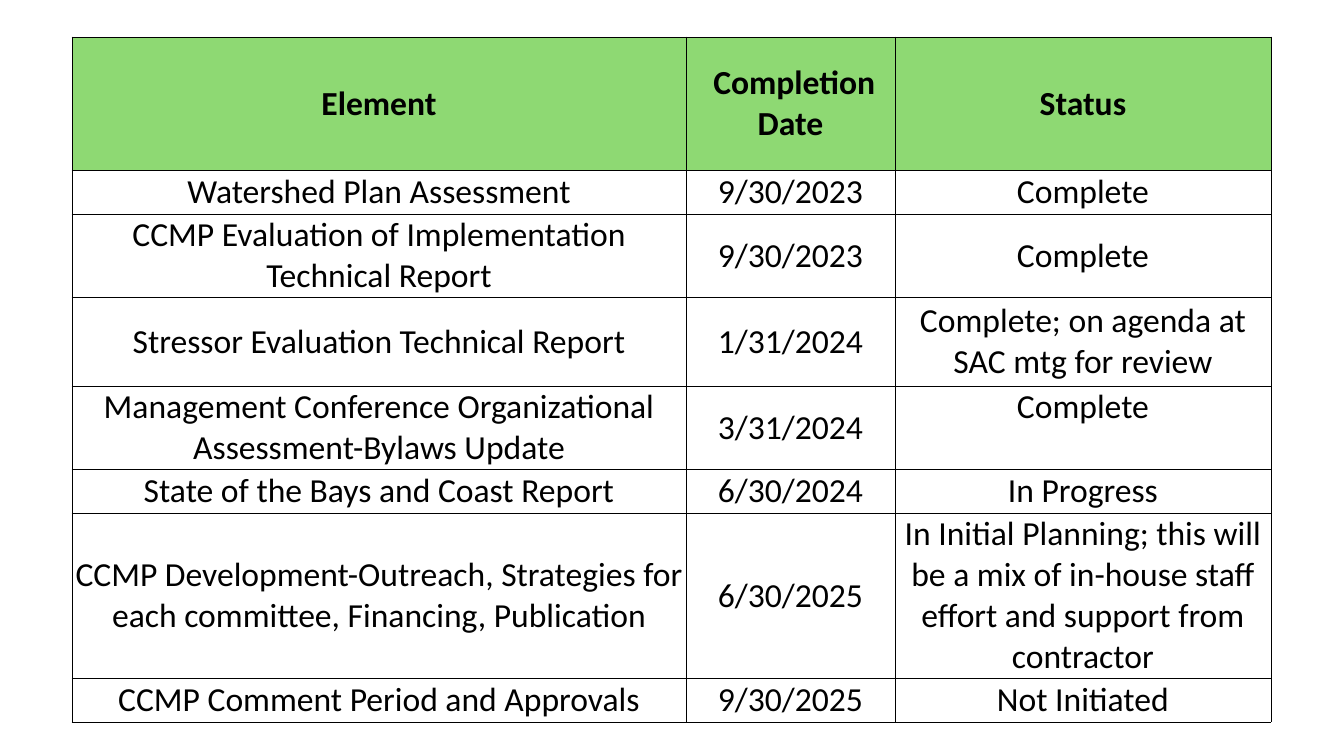
import pptx
import pptx.util
import pptx.dml.color
import pptx.enum.text
import pptx.oxml
import pptx.oxml.ns

EMU_PER_PX = 914400 / 100.8
COLORS = {"header": "8ED973", "text": "000000", "border": "000000"}
FONT = "Calibri"
MIDDLE = pptx.enum.text.MSO_ANCHOR.MIDDLE
TOP = pptx.enum.text.MSO_ANCHOR.TOP


def px(length):
    return pptx.util.Emu(round(length * EMU_PER_PX))


def write_cell(cell, text, bold=False, size=24, anchor=MIDDLE):
    cell.vertical_anchor = anchor
    cell.margin_left = cell.margin_right = cell.margin_top = px(1)
    cell.margin_bottom = 0
    paragraph = cell.text_frame.paragraphs[0]
    paragraph.alignment = pptx.enum.text.PP_ALIGN.CENTER
    run = paragraph.add_run()
    run.text = text
    run.font.name = FONT
    run.font.size = pptx.util.Pt(size)
    run.font.bold = bold
    run.font.color.rgb = pptx.dml.color.RGBColor.from_string(COLORS["text"])


# Slide
presentation = pptx.Presentation()
presentation.slide_width = px(1344)
presentation.slide_height = px(756)
slide = presentation.slides.add_slide(presentation.slide_layouts[6])

# Schedule contents
SCHEDULE = [
    ("Element", " Completion Date", "Status"),
    ("Watershed Plan Assessment", "9/30/2023", "Complete"),
    ("CCMP Evaluation of Implementation Technical Report", "9/30/2023", "Complete"),
    ("Stressor Evaluation Technical Report", "1/31/2024",
     "Complete; on agenda at SAC mtg for review"),
    ("Management Conference Organizational Assessment-Bylaws Update", "3/31/2024",
     "Complete"),
    ("State of the Bays and Coast Report", "6/30/2024", "In Progress"),
    ("CCMP Development-Outreach, Strategies for each committee, Financing, Publication",
     "6/30/2025",
     "In Initial Planning; this will be a mix of in-house staff effort and support "
     "from contractor"),
    ("CCMP Comment Period and Approvals", "9/30/2025", "Not Initiated"),
]
COLUMN_WIDTHS = [614, 209, 376]
ROW_HEIGHTS = [133, 44, 80, 89, 80, 44, 133, 44]
TOP_ALIGNED = (4, 2)

# Table grid
frame = slide.shapes.add_table(
    len(SCHEDULE), len(COLUMN_WIDTHS), px(72), px(37), px(sum(COLUMN_WIDTHS)), px(681))
table = frame.table
table.horz_banding = False
for column, width in zip(table.columns, COLUMN_WIDTHS):
    column.width = px(width)
for row, height in zip(table.rows, ROW_HEIGHTS):
    row.height = px(height)
frame.height = px(681)

# Cells: text, fill and thin borders
for row_index, texts in enumerate(SCHEDULE):
    is_header = row_index == 0
    for column_index, text in enumerate(texts):
        cell = table.cell(row_index, column_index)
        anchor = TOP if (row_index, column_index) == TOP_ALIGNED else MIDDLE
        write_cell(cell, text, bold=is_header, anchor=anchor)
        properties = cell._tc.get_or_add_tcPr()
        for side in ("lnL", "lnR", "lnT", "lnB"):
            properties.append(pptx.oxml.parse_xml(
                f'<a:{side} {pptx.oxml.ns.nsdecls("a")} w="6350"><a:solidFill>'
                f'<a:srgbClr val="{COLORS["border"]}"/></a:solidFill></a:{side}>'))
        if is_header:
            cell.fill.solid()
            cell.fill.fore_color.rgb = pptx.dml.color.RGBColor.from_string(COLORS["header"])
        else:
            cell.fill.background()

presentation.save("out.pptx")
